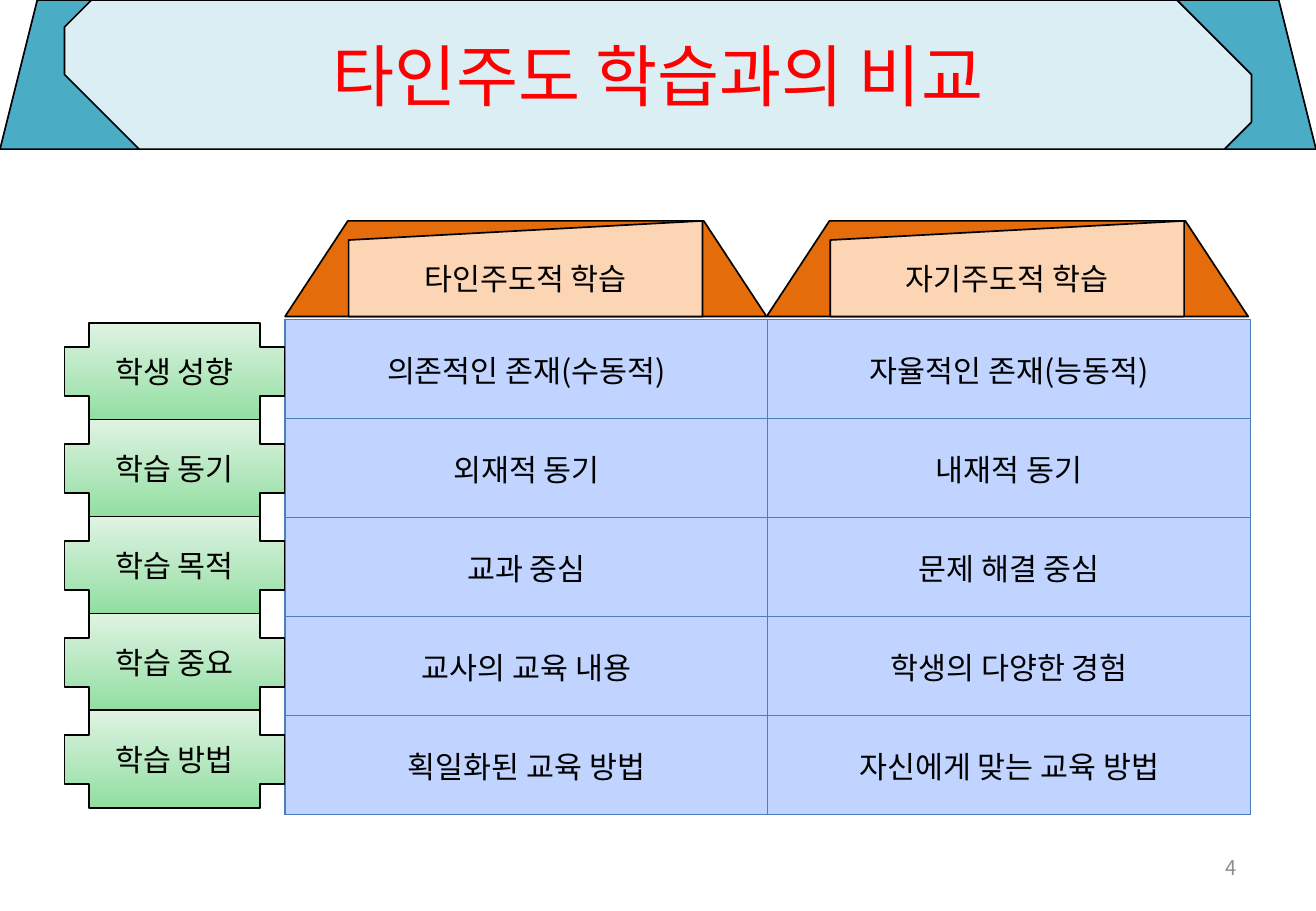
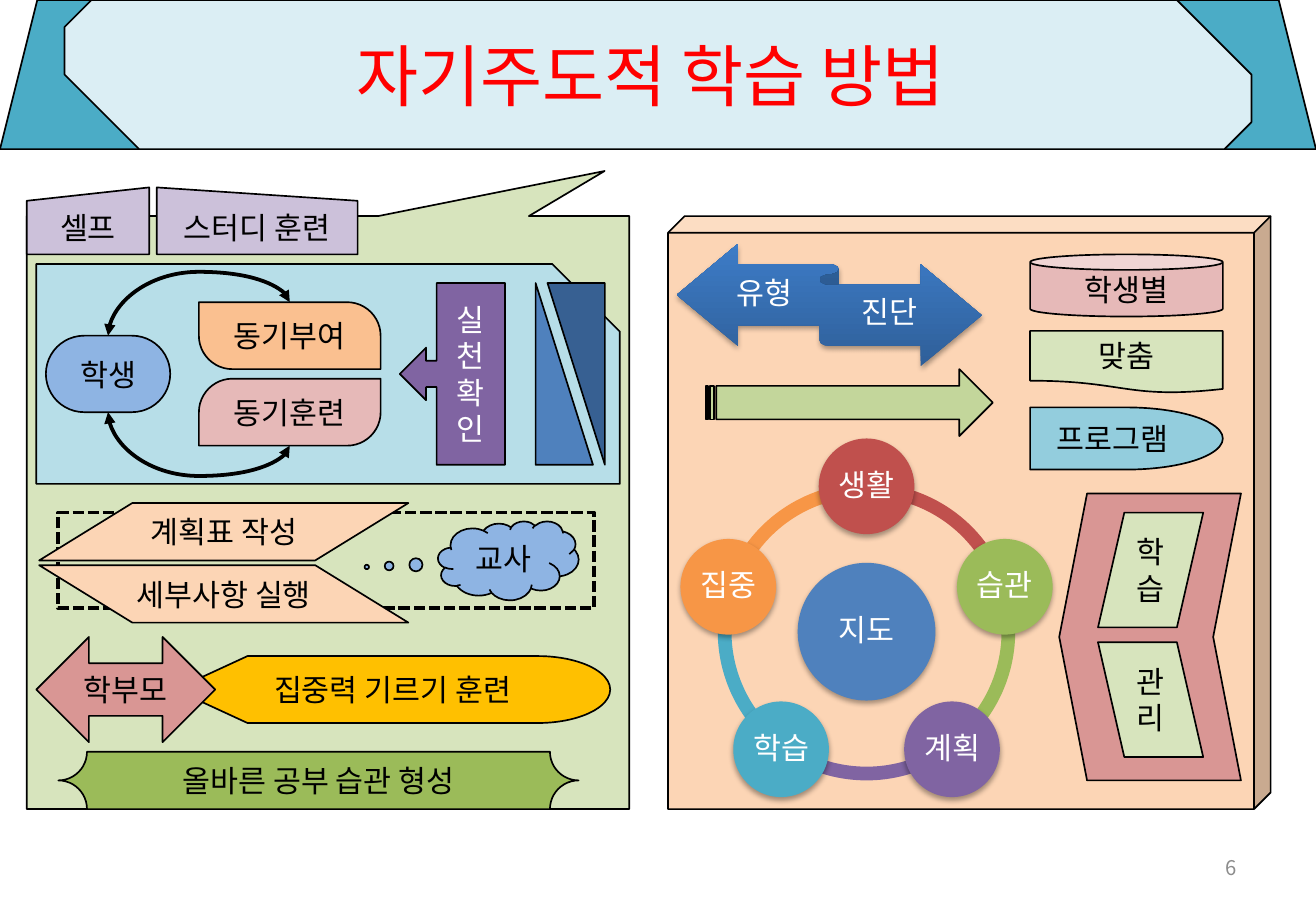
from math import cos, radians, sin

from pptx import Presentation
from pptx import util as u
from pptx.dml.color import RGBColor
from pptx.enum import dml, shapes, text
from pptx.oxml import ns
from lxml import etree

S = shapes.MSO_SHAPE
FONT = "Noto Sans CJK KR"
WIDTH, HEIGHT = u.Pt(780), u.Pt(540)
CELL = u.Mm(2)
COLS = WIDTH / CELL
BAND = 15.6

BLACK = RGBColor(0, 0, 0)
WHITE = RGBColor(0xFF, 0xFF, 0xFF)
SCARLET = RGBColor(0xFF, 0, 0)
GRAY = RGBColor(0x8C, 0x8C, 0x8C)
TEAL = RGBColor(0x4B, 0xAC, 0xC6)
ICE = RGBColor(0xDB, 0xEE, 0xF4)
RUST = RGBColor(0xE4, 0x6C, 0x0A)
PEACH = RGBColor(0xFC, 0xD5, 0xB5)
MINT = [RGBColor(0x91, 0xDE, 0xA0), RGBColor(0xDF, 0xF3, 0xE3)]
RIBBON = [RGBColor(0x2F, 0x5F, 0x99), RGBColor(0x3D, 0x7C, 0xC7)]
CELLS = RGBColor(0xC0, 0xD4, 0xFF)
RULE = RGBColor(0x4B, 0x7E, 0xBC)
SAGE = RGBColor(0xD7, 0xE4, 0xBD)
LILAC = RGBColor(0xCC, 0xC1, 0xDA)
POOL = RGBColor(0xB7, 0xDE, 0xE8)
SKY = RGBColor(0x8E, 0xB4, 0xE3)
APRICOT = RGBColor(0xFA, 0xC0, 0x90)
PINK = RGBColor(0xE6, 0xB9, 0xB8)
ROSE = RGBColor(0xD9, 0x96, 0x94)
PURPLE = RGBColor(0x80, 0x64, 0xA2)
BLUE = RGBColor(0x4F, 0x81, 0xBD)
NAVY = RGBColor(0x37, 0x60, 0x92)
GREEN = RGBColor(0x9B, 0xBB, 0x59)
LIME = RGBColor(0xC3, 0xD6, 0x9B)
GOLD = RGBColor(0xFF, 0xC0, 0)
BRICK = RGBColor(0xC0, 0x50, 0x4D)
ORANGE = RGBColor(0xF7, 0x96, 0x46)
AQUA = RGBColor(0x93, 0xCD, 0xDD)


def node(root, tag, **attrs):
    item = etree.SubElement(root, ns.qn(tag))
    for key, val in attrs.items():
        item.set(key, str(val))
    return item


def place(area, box):
    _, left, top = area
    x, y, w, h = box
    return [int(n * CELL) for n in (left + x, top + y, w, h)]


def write(frame, words, ink=BLACK, size=18, align=text.PP_ALIGN.CENTER,
          pitch=None):
    frame.text = words
    for para in frame.paragraphs:
        para.alignment = align
        para.line_spacing = pitch
        font = para.font
        font.size, font.name = u.Pt(size), FONT
        font.color.rgb = ink
        node(para._p.pPr.find(ns.qn("a:defRPr")), "a:ea", typeface=FONT)


def mirror(form, flip):
    for axis in flip:
        form.set("flip" + axis, "1")


def paint(fill, tone):
    if tone is None:
        fill.background()
    elif isinstance(tone, list):
        fill.gradient()
        fill.gradient_angle = 90
        for stop, ink in zip(fill.gradient_stops, tone):
            stop.color.rgb = ink
    else:
        fill.solid()
        fill.fore_color.rgb = tone


def inset(frame, pad):
    frame.margin_left = frame.margin_right = pad
    frame.margin_top = frame.margin_bottom = pad


def put(area, kind, box, fill=None, words="", ink=BLACK, flip="", adj=(),
        edge=1):
    item = area[0].shapes.add_shape(kind, *place(area, box))
    item.shadow.inherit = False
    for i, val in enumerate(adj):
        item.adjustments[i] = val
    mirror(item.element.spPr.get_or_add_xfrm(), flip)
    paint(item.fill, fill)
    if edge:
        item.line.color.rgb = BLACK
        item.line.width = u.Pt(edge)
    else:
        item.line.fill.background()
    if words:
        write(item.text_frame, words, ink)
    return item


def label(area, box, words, pad=u.Inches(0.1), **style):
    frame = area[0].shapes.add_textbox(*place(area, box)).text_frame
    frame.word_wrap = True
    frame.vertical_anchor = text.MSO_ANCHOR.MIDDLE
    inset(frame, pad)
    write(frame, words, **style)


def shade(item):
    glow = item.element.spPr.find(ns.qn("a:effectLst"))
    cast = node(glow, "a:outerShdw", blurRad=40000, dist=23000,
                dir=5400000, rotWithShape=0)
    node(node(cast, "a:srgbClr", val="000000"), "a:alpha", val=35000)


def bend(area, row, turn, flip):
    x, y, w, h = place(area, (16.25, row - 9.5, 3.5, 19))
    wire = area[0].shapes.add_connector(
        shapes.MSO_CONNECTOR.CURVE, x, y, x + w, y + h)
    wire.line.color.rgb = BLACK
    wire.line.width = u.Pt(2.25)
    props = wire.element.spPr
    form = props.find(ns.qn("a:xfrm"))
    form.set("rot", str(turn * 60000))
    mirror(form, flip)
    guides = props.find(ns.qn("a:prstGeom")).find(ns.qn("a:avLst"))
    node(guides, "a:gd", name="adj1", fmla="val 190700")
    line = props.find(ns.qn("a:ln"))
    for end in ("a:headEnd", "a:tailEnd"):
        node(line, end, type="triangle")
    node(props, "a:effectLst")


def grid(area, box, rows):
    table = area[0].shapes.add_table(
        len(rows), len(rows[0]), *place(area, box)).table
    table.first_row = table.horz_banding = False
    for r, row in enumerate(rows):
        for c, words in enumerate(row):
            cell = table.cell(r, c)
            cell.vertical_anchor = text.MSO_ANCHOR.MIDDLE
            props = cell._tc.get_or_add_tcPr()
            for side in "LRTB":
                line = node(props, "a:ln" + side, w=u.Pt(0.75))
                node(node(line, "a:solidFill"), "a:srgbClr", val=RULE)
            paint(cell.fill, CELLS)
            write(cell.text_frame, words)


def page(deck, title, num):
    slide = deck.slides.add_slide(deck.slide_layouts[6])
    area = (slide, 0, 0)
    put(area, S.TRAPEZOID, (0, 0, COLS, BAND), TEAL)
    inner = (6.75, 0, COLS - 13.5, BAND)
    put(area, S.SNIP_2_DIAG_RECTANGLE, inner, ICE, adj=(0.181, 0.5))
    label(area, inner, title, ink=SCARLET, size=40)
    label(area, (98.5, 88.2, 32.1, 5.1), num, ink=GRAY, size=12,
          align=text.PP_ALIGN.RIGHT)
    return slide


def compare(slide):
    area = (slide, 0, 0)
    left, wide = 29.8, 50.35
    for i, words in enumerate(("타인주도적 학습", "자기주도적 학습")):
        x = left + i * wide
        put(area, S.TRAPEZOID, (x, 23.1, wide, 10), RUST, adj=(0.657,))
        put(area, S.FLOWCHART_MANUAL_INPUT, (x + 6.65, 23.1, 37, 10),
            PEACH, words)
    grid(area, (left, 33.4, 100.95, 51.75), (
        ("의존적인 존재(수동적)", "자율적인 존재(능동적)"),
        ("외재적 동기", "내재적 동기"),
        ("교과 중심", "문제 해결 중심"),
        ("교사의 교육 내용", "학생의 다양한 경험"),
        ("획일화된 교육 방법", "자신에게 맞는 교육 방법")))
    names = ("학생 성향", "학습 동기", "학습 목적", "학습 중요", "학습 방법")
    for i, words in enumerate(names):
        put(area, S.CROSS, (6.75, 33.75 + i * 10.13, 23, 10.25), MINT, words)


def study(area):
    put(area, S.RECTANGULAR_CALLOUT, (0, 0, 63, 62), SAGE, flip="V",
        adj=(0.459, 0.576))
    dash = put(area, S.RECTANGLE, (3.3, 31, 56, 10), edge=2.25)
    dash.line.dash_style = dml.MSO_LINE.SQUARE_DOT
    put(area, S.FLOWCHART_MANUAL_INPUT, (0, -3, 12.8, 7), LILAC, "셀프")
    put(area, S.FLOWCHART_MANUAL_INPUT, (13.6, -3, 21, 7), LILAC,
        "스터디 훈련", flip="H")
    put(area, S.SNIP_1_RECTANGLE, (1, 5, 61, 23), POOL, adj=(0.307,))
    put(area, S.ROUNDED_RECTANGLE, (2, 12.5, 13, 8), SKY, "학생", adj=(0.5,))
    put(area, S.ROUND_2_DIAG_RECTANGLE, (18, 9, 19, 7), APRICOT, "동기부여",
        flip="H", adj=(0.5, 0))
    put(area, S.ROUND_2_DIAG_RECTANGLE, (18, 17, 19, 7), PINK, "동기훈련",
        adj=(0.5, 0))
    put(area, S.LEFT_ARROW_CALLOUT, (39, 7, 11, 19), PURPLE, "실천\n확인",
        WHITE)
    put(area, S.RIGHT_TRIANGLE, (53.2, 7, 6, 19), BLUE)
    put(area, S.RIGHT_TRIANGLE, (54.45, 7, 6, 19), NAVY, flip="HV")
    bend(area, 10.75, 90, "HV")
    bend(area, 22.25, 270, "H")
    put(area, S.PARALLELOGRAM, (1.3, 30, 38.6, 6), PEACH, "계획표 작성",
        adj=(1.623,))
    put(area, S.PARALLELOGRAM, (1.3, 36.5, 38.6, 6), PEACH, "세부사항 실행",
        flip="H", adj=(1.623,))
    put(area, S.CLOUD_CALLOUT, (43, 31.9, 14.7, 8.25), SKY, "교사",
        adj=(-1.007, 0.08))
    put(area, S.PLAQUE, (3.3, 56, 54.4, 6), GREEN, "올바른 공부 습관 형성",
        adj=(0.5,))
    put(area, S.FLOWCHART_DISPLAY, (15.5, 46, 45.5, 7), GOLD,
        "집중력 기르기 훈련")
    put(area, S.LEFT_RIGHT_ARROW, (1, 44, 18.7, 11), ROSE, "학부모")


def round_box(x, y, size):
    return x - size / 2, y - size / 2, size, size


def wheel(area, x, y):
    items = (("생활", BRICK), ("습관", GREEN), ("계획", PURPLE),
             ("학습", TEAL), ("집중", ORANGE))
    turns = [(270 + 72 * i) % 360 for i in range(len(items))]
    for turn, (_, tone) in zip(turns, items):
        put(area, S.BLOCK_ARC, round_box(x, y, 31.1), tone, edge=0,
            adj=(turn * 0.6, (turn + 72) % 360 * 0.6, 0.046))
    discs = [(x, y, 14.4, "지도", BLUE)]
    for turn, (words, tone) in zip(turns, items):
        ang = radians(turn)
        discs.append((x + 15.2 * cos(ang), y + 15.2 * sin(ang), 10,
                      words, tone))
    for cx, cy, size, words, tone in discs:
        shade(put(area, S.OVAL, round_box(cx, cy, size), tone, edge=0))
        label(area, round_box(cx, cy, size * 0.71), words,
              pad=u.Inches(0.03), ink=WHITE, pitch=0.9)


def guide(area):
    put(area, S.CUBE, (0, 0, 63, 62), PEACH, adj=(0.028,))
    shade(put(area, S.LEFT_RIGHT_RIBBON, (0.9, 2.9, 31.9, 12.8), RIBBON,
              edge=0))
    label(area, (4.8, 5.1, 10.5, 6.2), "유형", pad=0, ink=WHITE, pitch=0.9)
    label(area, (16.9, 7.1, 12.4, 6.2), "진단", pad=0, ink=WHITE, pitch=0.9)
    wheel(area, 20.75, 43.45)
    put(area, S.CHEVRON, (40.9, 29, 19, 30), ROSE, flip="H", adj=(0.153,))
    put(area, S.PARALLELOGRAM, (44.95, 31, 11, 12), SAGE, "학습")
    put(area, S.PARALLELOGRAM, (44.95, 44.55, 11, 12), SAGE, "관리", flip="H")
    put(area, S.STRIPED_RIGHT_ARROW, (3.95, 16, 30, 7), LIME)
    steps = ((S.CAN, PINK, "학생별", ""),
             (S.FLOWCHART_DOCUMENT, SAGE, "맞춤", "H"),
             (S.FLOWCHART_DELAY, AQUA, "프로그램", ""))
    for i, (kind, tone, words, flip) in enumerate(steps):
        put(area, kind, (37.85, 4 + 8 * i, 20.15, 6.5), tone, words, flip=flip)


def main():
    deck = Presentation()
    deck.slide_width, deck.slide_height = WIDTH, HEIGHT
    compare(page(deck, "타인주도 학습과의 비교", "4"))
    slide = page(deck, "자기주도적 학습 방법 ", "6")
    study((slide, 2.8, 22.6))
    guide((slide, 69.85, 22.6))
    deck.save("out.pptx")


if __name__ == "__main__":
    main()
